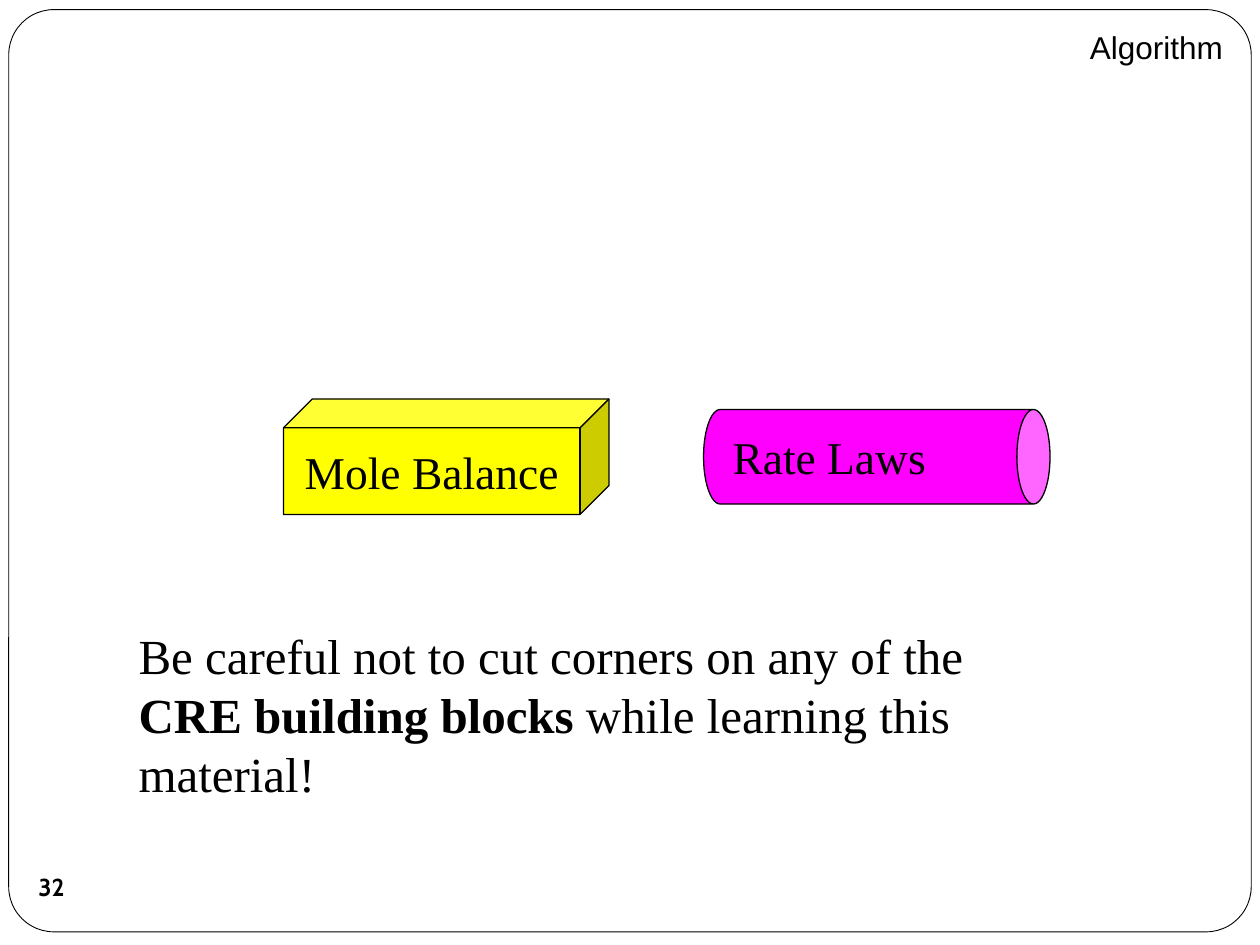
from pptx import Presentation
from pptx import util as u
from pptx.dml import color
from pptx.enum import shapes, text

SERIF = "Times New Roman"
SHAPE = shapes.MSO_SHAPE
ALIGN = text.PP_ALIGN
ANCHOR = text.MSO_ANCHOR


def rgb(value):
    return color.RGBColor.from_string(value)


def place(box, left, top, width, height):
    box.left, box.top = u.Pt(left), u.Pt(top)
    box.width, box.height = u.Pt(width), u.Pt(height)


def add_block(page, kind, bounds, fill=None, line=None, adjust=None):
    """Add a preset shape; bounds are left, top, width, height in points."""
    block = page.shapes.add_shape(kind, *(u.Pt(value) for value in bounds))
    block.shadow.inherit = False
    if adjust is not None:
        block.adjustments[0] = adjust
    if fill:
        block.fill.solid()
        block.fill.fore_color.rgb = rgb(fill)
    else:
        block.fill.background()
    if line:
        block.line.color.rgb = rgb("000000")
        block.line.width = u.Pt(line)
    else:
        block.line.fill.background()
    return block


def write(box, *paras, font=SERIF, size=26, align=ALIGN.CENTER,
          anchor=ANCHOR.MIDDLE, wrap=True, margins=(7.2, 3.6)):
    """Fill a box with paragraphs, each a list of (words, bold) spans."""
    frame = box.text_frame
    frame.word_wrap = wrap
    frame.auto_size = text.MSO_AUTO_SIZE.NONE
    frame.vertical_anchor = anchor
    frame.margin_left = frame.margin_right = u.Pt(margins[0])
    frame.margin_top = frame.margin_bottom = u.Pt(margins[1])
    for index, spans in enumerate(paras):
        para = frame.add_paragraph() if index else frame.paragraphs[0]
        para.alignment = align
        para.space_before = u.Pt(0)
        for words, bold in spans:
            span = para.add_run()
            span.text = words
            span.font.name = font
            span.font.size = u.Pt(size)
            span.font.bold = bold
            span.font.color.rgb = rgb("000000")


def remove_bullets(box):
    for para in box.text_frame.paragraphs:
        settings = para._p.get_or_add_pPr()
        settings.set("marL", "0")
        settings.set("indent", "0")
        settings.append(settings.makeelement(
            "{http://schemas.openxmlformats.org/drawingml/2006/main}buNone"))


def main():
    deck = Presentation()
    deck.slide_width, deck.slide_height = u.Pt(720), u.Pt(540)
    page = deck.slides.add_slide(deck.slide_layouts[1])
    title, body = page.placeholders

    # Rounded page frame, kept behind everything else
    frame = add_block(page, SHAPE.ROUNDED_RECTANGLE, (5, 5.5, 710, 527),
                      "FFFFFF", 0.5, 0.049)
    page.shapes._spTree.insert(2, frame._element)

    # Title
    place(title, 507, 12.5, 199, 29)
    write(title, [("Algorithm", False)], font="Arial", size=18,
          align=ALIGN.RIGHT, anchor=ANCHOR.TOP)

    # Building blocks
    cube = add_block(page, SHAPE.CUBE, (162, 228, 186, 66), "FFFF00", 0.75, 0.25)
    write(cube, [("Mole Balance", False)], wrap=False)

    can = add_block(page, SHAPE.CAN, (474, 162, 54, 198), "FF00FF", 0.75, 0.351)
    can.rotation = 90
    write(can, [("Rate Laws", False)], align=ALIGN.LEFT)
    # Turn the words back so that they read level in the rotated can
    can.text_frame._txBody.bodyPr.set("vert", "vert270")

    # Advice
    place(body, 72, 354, 546, 109)
    write(body,
          [("Be careful not to cut corners on any of the", False)],
          [("CRE building blocks ", True),
           ("while learning this material!", False)],
          size=28, align=ALIGN.LEFT, anchor=ANCHOR.TOP)
    remove_bullets(body)

    # Page number
    number = add_block(page, SHAPE.OVAL, (11.5, 489, 36, 36))
    write(number, [("32", True)], font="Cabin", size=14, wrap=False,
          margins=(0, 0))

    deck.save("out.pptx")


if __name__ == "__main__":
    main()
